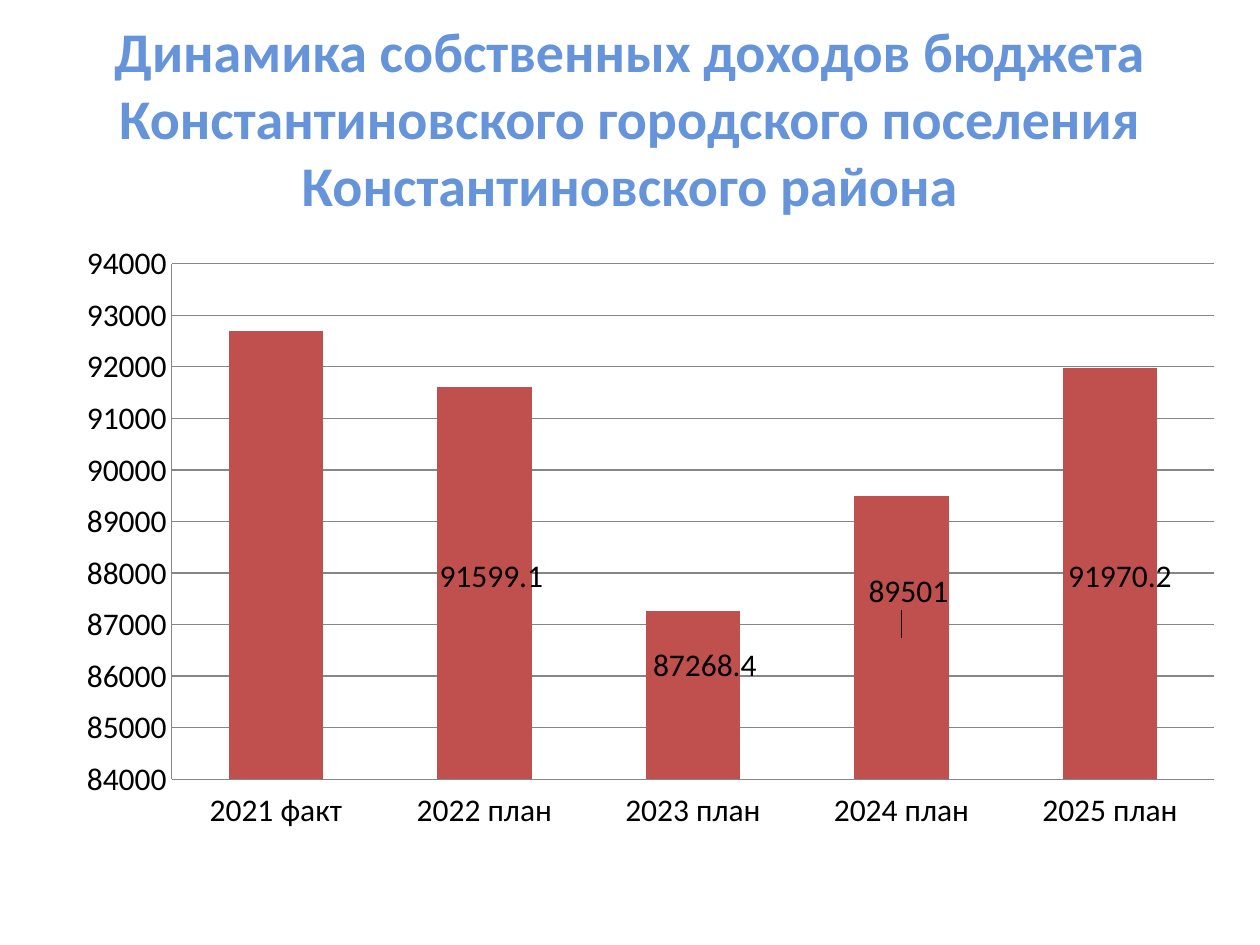
from lxml.etree import SubElement
from pptx import Presentation
from pptx.chart.data import CategoryChartData
from pptx.dml.color import RGBColor
from pptx.enum.chart import XL_CHART_TYPE, XL_LABEL_POSITION, XL_TICK_LABEL_POSITION, XL_TICK_MARK
from pptx.enum.text import MSO_ANCHOR, MSO_AUTO_SIZE, PP_ALIGN
from pptx.oxml.ns import qn
from pptx.util import Emu, Pt

EMU_PER_PX = 914400 / 126
FONT = "Calibri"
COLORS = {"title": "6594DA", "text": "000000", "bar": "C0504D", "grid": "868686"}
TITLE_BOX = (63, 38, 1134, 158)
CHART_BOX = (44, 244, 1171, 635)
INCOME = {
    "2021 факт": 92693.9,
    "2022 план": 91599.1,
    "2023 план": 87268.4,
    "2024 план": 89501,
    "2025 план": 91970.2,
}
# Shift of a value label from the middle of its bar, in px, by bar index
LABEL_SHIFTS = {1: (7, -7), 2: (12, -30), 3: (7, -46), 4: (10, 3)}


def px(length):
    return Emu(round(length * EMU_PER_PX))


def color(name):
    return RGBColor.from_string(COLORS[name])


def style_font(font, size, color_name, bold=False):
    font.name = FONT
    font.size = Pt(size)
    font.bold = bold
    font.color.rgb = color(color_name)


def add_layout(parent, **values):
    """Append a manual chart layout to parent and return its element."""
    layout = SubElement(parent, qn("c:layout"))
    manual = SubElement(layout, qn("c:manualLayout"))
    for name, value in values.items():
        SubElement(manual, qn(f"c:{name}")).set("val", str(value))
    return layout


def place_title(slide, box):
    title = slide.shapes.title
    title.left, title.top, title.width, title.height = map(px, box)
    frame = title.text_frame
    frame.text = ("Динамика собственных доходов бюджета Константиновского "
                  "городского поселения Константиновского района")
    frame.word_wrap = True
    frame.auto_size = MSO_AUTO_SIZE.NONE
    frame.vertical_anchor = MSO_ANCHOR.MIDDLE
    paragraph = frame.paragraphs[0]
    paragraph.alignment = PP_ALIGN.CENTER
    style_font(paragraph.runs[0].font, 32, "title", bold=True)


def style_axes(chart):
    for axis in (chart.category_axis, chart.value_axis):
        axis.major_tick_mark = axis.minor_tick_mark = XL_TICK_MARK.NONE
        axis.format.line.color.rgb = color("grid")
        axis.format.line.width = Pt(0.75)
    chart.category_axis.tick_label_position = XL_TICK_LABEL_POSITION.LOW
    value_axis = chart.value_axis
    value_axis.minimum_scale, value_axis.maximum_scale = 84000, 94000
    value_axis.major_unit = 1000
    value_axis.has_major_gridlines = True
    gridline = value_axis.major_gridlines.format.line
    gridline.color.rgb = color("grid")
    gridline.width = Pt(0.75)


def style_labels(chart, plot, width, height):
    plot.has_data_labels = True
    plot.data_labels.show_value = True
    style_font(plot.data_labels.font, 18, "text")
    for index in LABEL_SHIFTS:
        label = plot.series[0].points[index].data_label
        style_font(label.font, 18, "text")
        label.position = XL_LABEL_POSITION.CENTER
    for element in chart.element.iter(qn("c:dLbl")):
        index_element = element.find(qn("c:idx"))
        shift_x, shift_y = LABEL_SHIFTS[int(index_element.get("val"))]
        layout = add_layout(element, x=round(shift_x / width, 4), y=round(shift_y / height, 4))
        index_element.addnext(layout)


def place_chart(slide, box):
    data = CategoryChartData(number_format="General")
    data.categories = list(INCOME)
    data.add_series("Series 1", list(INCOME.values()))
    chart = slide.shapes.add_chart(XL_CHART_TYPE.COLUMN_STACKED, *map(px, box), data).chart
    chart.has_legend = chart.has_title = False
    style_font(chart.font, 18, "text")

    plot = chart.plots[0]
    plot.gap_width, plot.overlap = 121, 100
    plot.vary_by_categories = False
    fill = plot.series[0].format.fill
    fill.solid()
    fill.fore_color.rgb = color("bar")
    style_axes(chart)
    style_labels(chart, plot, *box[2:])

    plot_area = next(chart.element.iter(qn("c:plotArea")))
    for layout in plot_area.findall(qn("c:layout")):
        plot_area.remove(layout)
    plot_area.insert(0, add_layout(plot_area, layoutTarget="inner", xMode="edge", yMode="edge",
                                   x=0.109, y=0.031, w=0.891, h=0.812))


def main():
    presentation = Presentation()
    presentation.slide_width, presentation.slide_height = px(1260), px(945)
    slide = presentation.slides.add_slide(presentation.slide_layouts[5])
    place_title(slide, TITLE_BOX)
    place_chart(slide, CHART_BOX)
    presentation.save("out.pptx")


if __name__ == "__main__":
    main()
